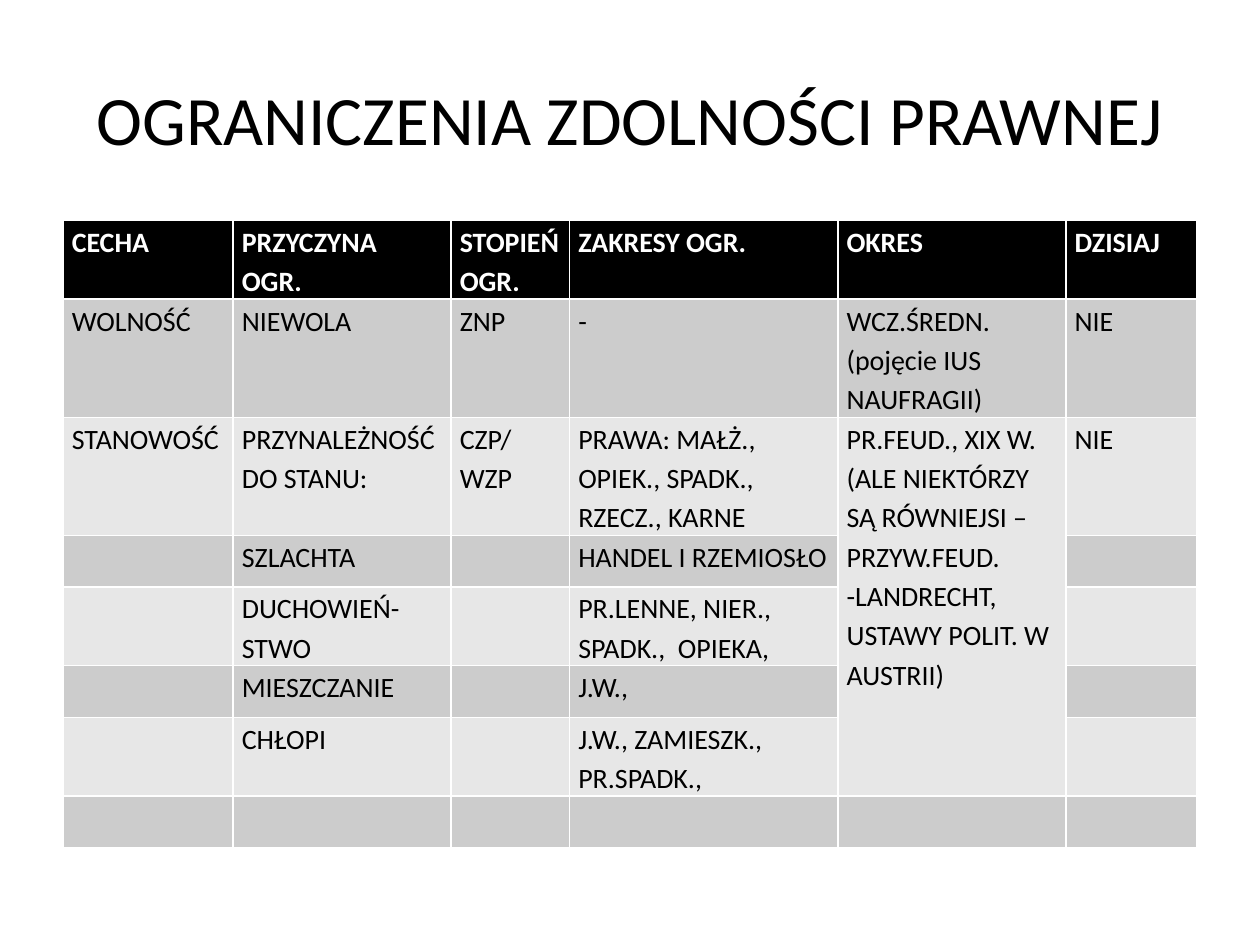
"""Build a one-slide table of historical limits on legal capacity."""
from dataclasses import dataclass

from pptx import Presentation
from pptx.dml.color import RGBColor
from pptx.enum.text import MSO_ANCHOR, PP_ALIGN
from pptx.util import Inches, Pt

TITLE = "OGRANICZENIA ZDOLNOŚCI PRAWNEJ"
HEADINGS = ["CECHA", "PRZYCZYNA OGR.", "STOPIEŃ OGR.", "ZAKRESY OGR.", "OKRES", "DZISIAJ"]
LIMITS = [
    ["WOLNOŚĆ", "NIEWOLA", "ZNP", "-", "WCZ.ŚREDN.\n(pojęcie IUS NAUFRAGII)", "NIE"],
    ["STANOWOŚĆ", "PRZYNALEŻNOŚĆ DO STANU:", "CZP/ WZP",
     "PRAWA: MAŁŻ., OPIEK., SPADK., RZECZ., KARNE",
     "PR.FEUD., XIX W. (ALE NIEKTÓRZY SĄ RÓWNIEJSI – PRZYW.FEUD. -LANDRECHT, "
     "USTAWY POLIT. W AUSTRII)", "NIE"],
    ["", "SZLACHTA", "", "HANDEL I RZEMIOSŁO", "", ""],
    ["", "DUCHOWIEŃ-STWO", "", "PR.LENNE, NIER., SPADK.,  OPIEKA,", "", ""],
    ["", "MIESZCZANIE", "", "J.W.,", "", ""],
    ["", "CHŁOPI", "", "J.W., ZAMIESZK., PR.SPADK.,", "", ""],
    [""] * 6,
]
COLUMN_WIDTHS = [1.35, 1.73, 0.94, 2.13, 1.81, 1.04]
ROW_HEIGHT = 0.41
PERIOD_COLUMN, PERIOD_FIRST_ROW, PERIOD_LAST_ROW = 4, 2, 6


@dataclass(frozen=True)
class Theme:
    font: str = "Calibri"
    title_size: float = 39.6
    cell_size: float = 16
    ink: str = "000000"
    paper: str = "FFFFFF"
    header: str = "000000"
    bands: tuple = ("CCCCCC", "E7E7E7")


THEME = Theme()


def write(frame, text, *, size, color, bold=False, align=None, spacing=None):
    """Fill a text frame, one paragraph for each line of text."""
    for index, line in enumerate(text.split("\n")):
        paragraph = frame.add_paragraph() if index else frame.paragraphs[0]
        paragraph.alignment = align
        paragraph.line_spacing = spacing
        run = paragraph.add_run()
        run.text = line
        run.font.name = THEME.font
        run.font.size = Pt(size)
        run.font.bold = bold
        run.font.color.rgb = RGBColor.from_string(color)


def add_title(slide):
    """Place and write the slide title."""
    title = slide.shapes.title
    title.left, title.top = Inches(0.5), Inches(0.31)
    title.width, title.height = Inches(9), Inches(1.25)
    title.text_frame.vertical_anchor = MSO_ANCHOR.MIDDLE
    write(title.text_frame, TITLE, size=THEME.title_size, color=THEME.ink,
          align=PP_ALIGN.CENTER)


def add_limits(slide):
    """Place the table, with the period of the estates merged down its column."""
    rows = [HEADINGS] + LIMITS
    table = slide.shapes.add_table(
        len(rows), len(HEADINGS), Inches(0.5), Inches(1.75),
        Inches(sum(COLUMN_WIDTHS)), Inches(ROW_HEIGHT * len(rows))).table
    for column, width in zip(table.columns, COLUMN_WIDTHS):
        column.width = Inches(width)
    for row_index, texts in enumerate(rows):
        table.rows[row_index].height = Inches(ROW_HEIGHT)
        is_header = row_index == 0
        fill = THEME.header if is_header else THEME.bands[(row_index - 1) % 2]
        for column_index, text in enumerate(texts):
            cell = table.cell(row_index, column_index)
            cell.fill.solid()
            cell.fill.fore_color.rgb = RGBColor.from_string(fill)
            if text:
                cell.margin_left = cell.margin_right = Inches(0.07)
                cell.margin_top = cell.margin_bottom = 0
                write(cell.text_frame, text, size=THEME.cell_size, bold=is_header,
                      color=THEME.paper if is_header else THEME.ink, spacing=1.15)
    table.cell(PERIOD_FIRST_ROW, PERIOD_COLUMN).merge(
        table.cell(PERIOD_LAST_ROW, PERIOD_COLUMN))


def main():
    """Build and save the presentation."""
    presentation = Presentation()
    presentation.slide_width, presentation.slide_height = Inches(10), Inches(7.5)
    slide = presentation.slides.add_slide(presentation.slide_layouts[5])
    add_title(slide)
    add_limits(slide)
    presentation.save("out.pptx")


if __name__ == "__main__":
    main()
